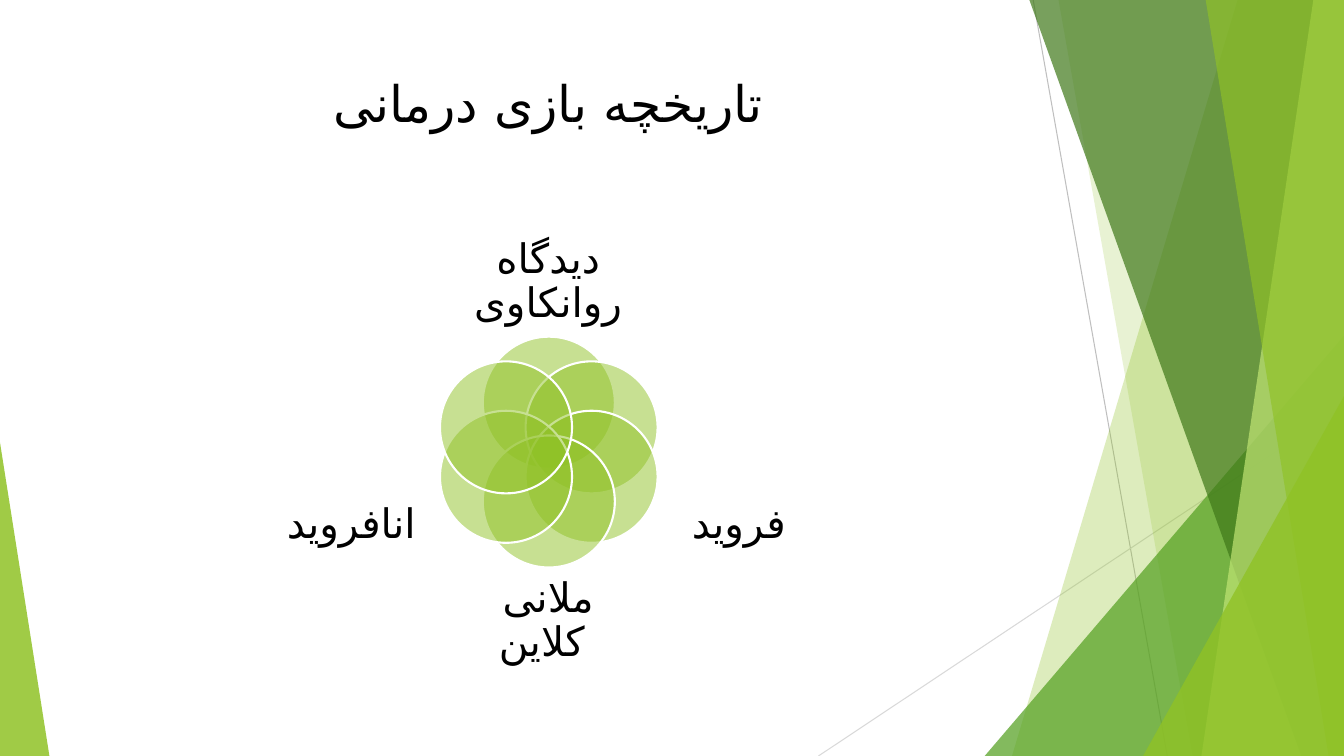
from math import cos, radians, sin

from lxml.etree import SubElement
from pptx import Presentation
from pptx.dml.color import RGBColor
from pptx.enum.shapes import MSO_CONNECTOR as CONN, MSO_SHAPE as SHAPE
from pptx.enum.text import MSO_ANCHOR as ANCHOR, PP_ALIGN as ALIGN
from pptx.oxml.ns import qn
from pptx.util import Pt

WIDTH, HEIGHT = 960, 540
FONT, ARABIC_FONT = "Roboto", "DejaVu Sans"
GREEN = "90C226"
CENTER_X, CENTER_Y = 392, 322.9
ORBIT, DIAMETER = 35.3, 94.3


def rgb(color):
    """Turn a hex string into a colour."""
    return RGBColor.from_string(color)


def fill(s, color, opacity):
    """Give a shape a translucent fill without shadow."""
    s.shadow.inherit = False
    s.fill.solid()
    s.fill.fore_color.rgb = rgb(color)
    clr = s.fill._xPr.find(qn("a:solidFill"))[0]
    SubElement(clr, qn("a:alpha"), val=str(opacity * 1000))


def add_line(sp, x1, y1, x2, y2, color):
    """Draw a thin straight line."""
    s = sp.add_connector(CONN.STRAIGHT, Pt(x1), Pt(y1), Pt(x2), Pt(y2))
    s.line.color.rgb = rgb(color)
    s.line.width = Pt(0.75)
    SubElement(s._element.spPr, qn("a:effectLst"))


def add_band(sp, top_x, bottom_x, color, opacity):
    """Draw a full-height band from a slanted edge to the right border."""
    top = Pt(-0.6)
    builder = sp.build_freeform(Pt(top_x), top, scale=1.0)
    builder.add_line_segments(
        [(Pt(WIDTH), top), (Pt(WIDTH), Pt(HEIGHT)), (Pt(bottom_x), Pt(HEIGHT))])
    s = builder.convert_to_shape()
    fill(s, color, opacity)
    s.line.fill.background()


def add_corner(sp, x, y, width, apex, color, opacity):
    """Draw a triangle standing on the bottom border."""
    s = sp.add_shape(SHAPE.ISOSCELES_TRIANGLE, Pt(x), Pt(y), Pt(width), Pt(HEIGHT - y))
    s.adjustments[0] = apex
    fill(s, color, opacity)
    s.line.fill.background()


def add_petal(sp, angle):
    """Draw one circle of the flower, clockwise from the top."""
    x = CENTER_X + ORBIT * sin(radians(angle)) - DIAMETER / 2
    y = CENTER_Y - ORBIT * cos(radians(angle)) - DIAMETER / 2
    s = sp.add_shape(SHAPE.OVAL, Pt(x), Pt(y), Pt(DIAMETER), Pt(DIAMETER))
    fill(s, GREEN, 50)
    s.line.color.rgb = rgb("FFFFFF")
    s.line.width = Pt(1.5)


def add_text(sp, text, x, y, width, height, size, anchor=ANCHOR.MIDDLE):
    """Add a centred text box and return its paragraph."""
    tf = sp.add_textbox(Pt(x), Pt(y), Pt(width), Pt(height)).text_frame
    tf.word_wrap = True
    tf.vertical_anchor = anchor
    tf.margin_left = tf.margin_right = tf.margin_top = tf.margin_bottom = 0
    p = tf.paragraphs[0]
    p.alignment = ALIGN.CENTER
    r = p.add_run()
    r.text = text
    r.font.size = Pt(size)
    r.font.name = FONT
    r.font.color.rgb = rgb("000000")
    SubElement(r._r.get_or_add_rPr(), qn("a:cs"), typeface=ARABIC_FONT)
    return p


def add_title(sp, text):
    """Add the right-to-left slide title."""
    p = add_text(sp, text, 53.3, 51.8, 676.8, 100, 36, ANCHOR.TOP)
    p._p.get_or_add_pPr().set("rtl", "1")


def add_label(sp, text, x, y, width, height):
    """Add a label beside the flower."""
    add_text(sp, text, x, y, width, height, 29).line_spacing = 0.9


def add_backdrop(sp):
    """Draw the green facets around the slide."""
    add_line(sp, 738, 0, 833.8, HEIGHT, "BFBFBF")
    add_line(sp, WIDTH, 290.2, 584.6, HEIGHT, "D9D9D9")
    add_band(sp, 884.2, 722.9, GREEN, 30)
    add_band(sp, 756, 851.8, GREEN, 20)
    add_corner(sp, 703.4, 239.8, 256.6, 1, "54A021", 72)
    add_band(sp, 735.1, 929.5, "3F7819", 70)
    add_band(sp, 938.2, 858.2, "C0E474", 70)
    add_band(sp, 861.1, 949, GREEN, 65)
    add_corner(sp, 816.5, 283, 143.5, 1, GREEN, 80)
    add_corner(sp, 0, 316.1, 35.3, 0, GREEN, 85)


def main():
    """Build and save the slide."""
    prs = Presentation()
    prs.slide_width, prs.slide_height = Pt(WIDTH), Pt(HEIGHT)
    sp = prs.slides.add_slide(prs.slide_layouts[6]).shapes
    add_backdrop(sp)
    add_title(sp, "تاریخچه بازی درمانی")
    labels = {
        0: ("دیدگاه روانکاوی", 332.6, 169.9, 118.1, 64.1),
        120: ("فروید ", 476.6, 336.2, 111.6, 78.5),
        180: ("ملانی کلاین ", 332.6, 411.8, 118.1, 64.1),
        240: ("انافروید", 195.1, 336.2, 111.6, 78.5),
    }
    for angle in range(0, 360, 60):
        add_petal(sp, angle)
        if angle in labels:
            add_label(sp, *labels[angle])
    prs.save("out.pptx")


if __name__ == "__main__":
    main()
